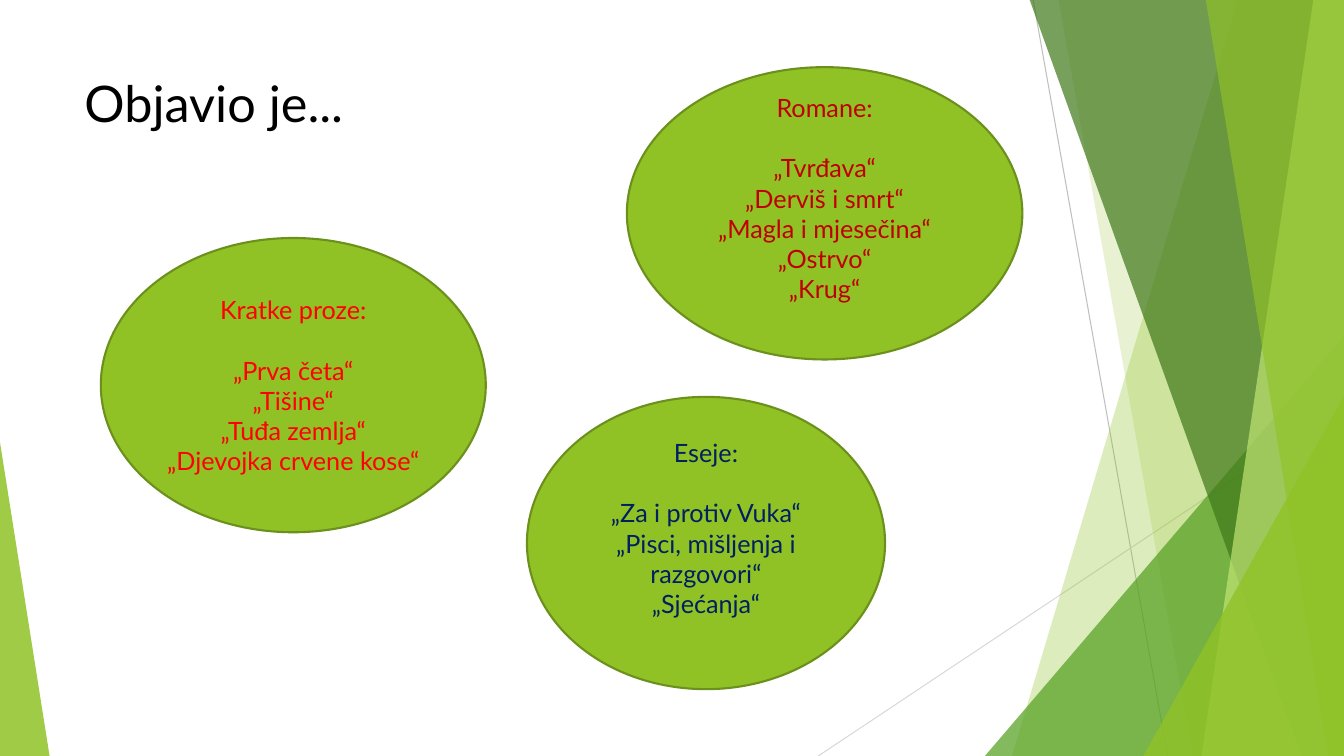
import pptx
import pptx.util
import pptx.dml.color
import pptx.enum.shapes
import pptx.enum.text
import pptx.oxml.ns
from lxml import etree

Pt = pptx.util.Pt
SHAPES = pptx.enum.shapes.MSO_SHAPE
ANCHORS = pptx.enum.text.MSO_ANCHOR
ALIGNS = pptx.enum.text.PP_ALIGN
WIDTH, HEIGHT = 960, 540
TOP = -0.6
LINE_HEIGHT = 21.6


def paint(color_owner, color, opacity=100):
    """Set a fill to a solid hex colour with an opacity in percent."""
    color_owner.solid()
    color_owner.fore_color.rgb = pptx.dml.color.RGBColor.from_string(color)
    if opacity < 100:
        node = color_owner._xPr.find(".//" + pptx.oxml.ns.qn("a:srgbClr"))
        alpha = etree.SubElement(node, pptx.oxml.ns.qn("a:alpha"))
        alpha.set("val", str(opacity * 1000))


def write(para, text, size, color, align=ALIGNS.LEFT, after=0):
    para.alignment = align
    para.space_after = Pt(after)
    span = para.add_run()
    span.text = text
    span.font.name = "Lato"
    span.font.size = Pt(size)
    paint(span.font.fill, color)


deck = pptx.Presentation()
deck.slide_width, deck.slide_height = Pt(WIDTH), Pt(HEIGHT)
page = deck.slides.add_slide(deck.slide_layouts[6])
paint(page.background.fill, "FFFFFF")

# Thin lines behind the facets
for x1, y1, x2, y2, color in [
    (738, 0, 834, HEIGHT, "BFBFBF"),
    (WIDTH, 290, 584.5, HEIGHT, "D9D9D9"),
]:
    line = page.shapes.add_connector(
        pptx.enum.shapes.MSO_CONNECTOR.STRAIGHT, Pt(x1), Pt(y1), Pt(x2), Pt(y2))
    line.line.width = Pt(0.75)
    paint(line.line.fill, color)
    etree.SubElement(line._element.spPr, pptx.oxml.ns.qn("a:effectLst"))

# Facets: ("band", top-left x, bottom-left x) reach the right edge,
# ("triangle", left, top, width, apex) reach the bottom edge
facets = [
    ("band", (884.3, 722.9), "90C226", 30),
    ("band", (756, 851.8), "90C226", 20),
    ("triangle", (703.5, 240, 256.5, 1), "54A021", 72),
    ("band", (735.3, 929.5), "3F7819", 70),
    ("band", (938.2, 858.3), "C0E474", 70),
    ("band", (861.2, 949), "90C226", 65),
    ("triangle", (816.6, 283, 143.4, 1), "90C226", 80),
    ("triangle", (0, 316, 35.4, 0), "90C226", 85),
]
for kind, place, color, opacity in facets:
    if kind == "band":
        top_x, bottom_x = place
        outline = page.shapes.build_freeform(Pt(top_x), Pt(TOP))
        outline.add_line_segments([
            (Pt(WIDTH), Pt(TOP)), (Pt(WIDTH), Pt(HEIGHT)), (Pt(bottom_x), Pt(HEIGHT))])
        facet = outline.convert_to_shape()
    else:
        left, top, width, apex = place
        facet = page.shapes.add_shape(
            SHAPES.ISOSCELES_TRIANGLE, Pt(left), Pt(top), Pt(width), Pt(HEIGHT - top))
        facet.adjustments[0] = apex
    facet.shadow.inherit = False
    facet.line.fill.background()
    paint(facet.fill, color, opacity)

title = page.shapes.add_textbox(Pt(53.3), Pt(48.2), Pt(676.8), Pt(103.7))
title.text_frame.word_wrap = True
write(title.text_frame.paragraphs[0], "Objavio je...", 36, "000000")

# Works by genre: place, text colour, lines left free below, heading, titles
genres = [
    ((72, 170, 275, 210.2), "FF0000", 0, "Kratke proze:",
     ["„Prva četa“", "„Tišine“", "„Tuđa zemlja“", "„Djevojka crvene kose“"]),
    ((447.8, 48, 282.5, 208.8), "C00000", 1, "Romane:",
     ["„Tvrđava“", "„Derviš i smrt“", "„Magla i mjesečina“", "„Ostrvo“", "„Krug“"]),
    ((376.4, 283.5, 255.8, 208.8), "002060", 1, "Eseje:",
     ["„Za i protiv Vuka“", "„Pisci, mišljenja i razgovori“", "„Sjećanja“"]),
]
for place, color, free_lines, heading, works in genres:
    oval = page.shapes.add_shape(SHAPES.OVAL, *[Pt(length) for length in place])
    oval.shadow.inherit = False
    paint(oval.fill, "90C226")
    paint(oval.line.fill, "6B901C")
    oval.line.width = Pt(1.5)
    frame = oval.text_frame
    frame.word_wrap = True
    frame.vertical_anchor = ANCHORS.MIDDLE
    frame.margin_bottom = Pt(3.6 + free_lines * LINE_HEIGHT)
    write(frame.paragraphs[0], heading, 18, color, ALIGNS.CENTER, after=LINE_HEIGHT)
    for work in works:
        write(frame.add_paragraph(), work, 18, color, ALIGNS.CENTER)

deck.save("out.pptx")
